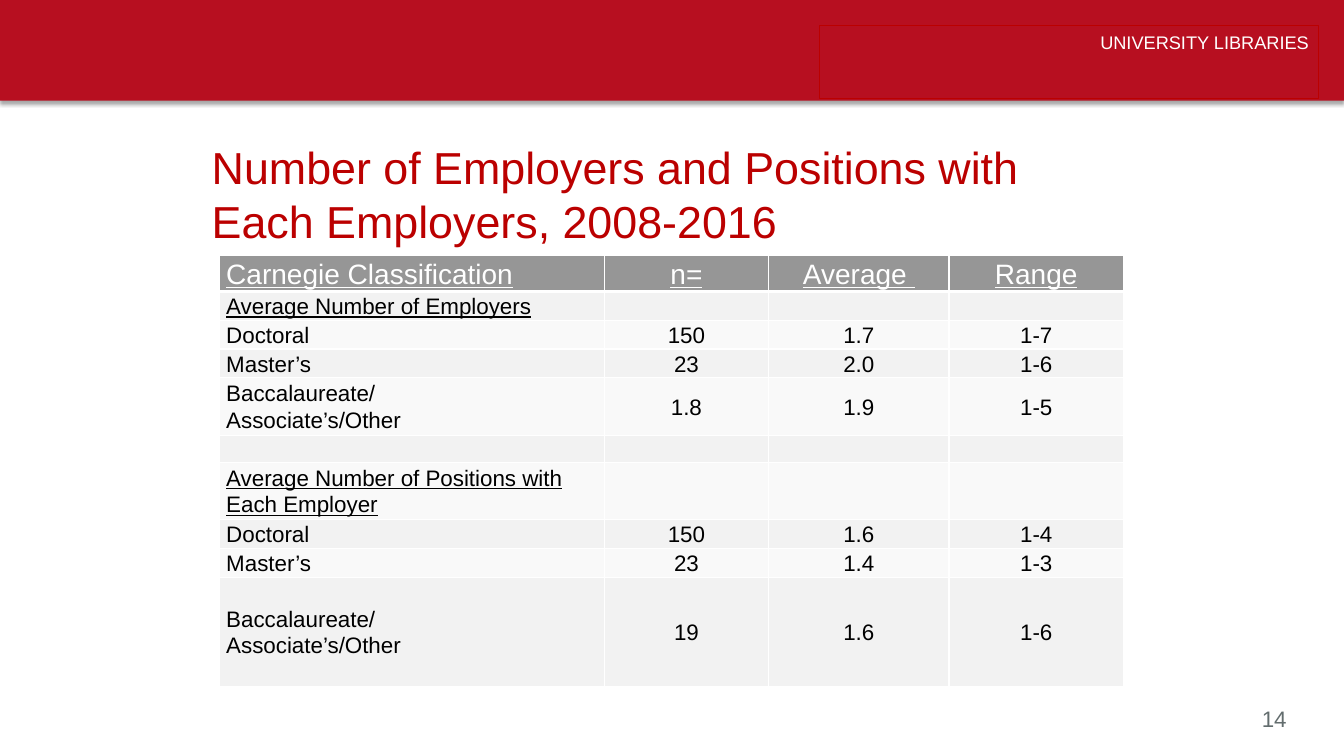
from lxml.etree import SubElement
from pptx import Presentation
from pptx.dml.color import RGBColor
from pptx.enum.shapes import MSO_SHAPE as Shape
from pptx.enum.text import MSO_ANCHOR as Anchor, MSO_AUTO_SIZE as AutoSize, PP_ALIGN as Align
from pptx.oxml.ns import qn
from pptx.util import Pt

BAR_RED = RGBColor(0xB7, 0x0F, 0x20)
TITLE_RED = RGBColor(0xBB, 0x00, 0x00)
HEADER_GREY = RGBColor(0x96, 0x96, 0x96)
BAND_DARK = RGBColor(0xF2, 0xF2, 0xF2)
BAND_LIGHT = RGBColor(0xF9, 0xF9, 0xF9)
NUMBER_GREY = RGBColor(0x63, 0x6D, 0x6E)
WHITE = RGBColor(0xFF, 0xFF, 0xFF)
BLACK = RGBColor(0x00, 0x00, 0x00)
FONT = "Arial"

COLUMN_WIDTHS = (275, 117.4, 128.9, 124.6)
ROWS = (
    (23.6, "Carnegie Classification", "n=", "Average ", "Range"),
    (19, "Average Number of Employers", "", "", ""),
    (19, "Doctoral", "150", "1.7", "1-7"),
    (19, "Master’s", "23", "2.0", "1-6"),
    (38, "Baccalaureate/\nAssociate’s/Other", "1.8", "1.9", "1-5"),
    (19, "", "", "", ""),
    (38, "Average Number of Positions with Each Employer", "", "", ""),
    (19, "Doctoral", "150", "1.6", "1-4"),
    (19, "Master’s", "23", "1.4", "1-3"),
    (78, "Baccalaureate/\nAssociate’s/Other", "19", "1.6", "1-6"),
)


def write_text(frame, text, size, color, align=Align.LEFT, underline=False, spacing=None):
    for index, line in enumerate(text.split("\n")):
        paragraph = frame.add_paragraph() if index else frame.paragraphs[0]
        paragraph.alignment = align
        if spacing:
            paragraph.line_spacing = spacing
        if not line:
            SubElement(paragraph._p, qn("a:endParaRPr"), sz=str(size * 100))
            continue
        run = paragraph.add_run()
        run.text = line
        run.font.name = FONT
        run.font.size = Pt(size)
        run.font.color.rgb = color
        run.font.underline = underline


def place(shape, left, top, width, height):
    shape.left, shape.top = Pt(left), Pt(top)
    shape.width, shape.height = Pt(width), Pt(height)


def add_bar(slide):
    bar = slide.shapes.add_shape(Shape.RECTANGLE, 0, 0, Pt(960), Pt(72))
    bar.fill.solid()
    bar.fill.fore_color.rgb = BAR_RED
    bar.line.fill.background()
    bar.shadow.inherit = False
    effects = bar._element.spPr.find(qn("a:effectLst"))
    shadow = SubElement(effects, qn("a:outerShdw"), blurRad=str(Pt(3.1)),
                        dist=str(Pt(1.8)), dir="5400000", rotWithShape="0")
    color = SubElement(shadow, qn("a:srgbClr"), val=str(BLACK))
    SubElement(color, qn("a:alpha"), val="35000")


def add_label(slide, text, left, top, width, height, wrap=True, **text_format):
    label = slide.shapes.add_textbox(Pt(left), Pt(top), Pt(width), Pt(height))
    label.text_frame.word_wrap = wrap
    write_text(label.text_frame, text, **text_format)
    return label


def set_title(slide, text):
    title = slide.shapes.title
    place(title, 144, 95, 651.6, 87.1)
    frame = title.text_frame
    frame.word_wrap = True
    frame.auto_size = AutoSize.NONE
    frame.vertical_anchor = Anchor.MIDDLE
    write_text(frame, text, size=32, color=TITLE_RED)


def set_borders(cell, **widths):
    properties = cell._tc.get_or_add_tcPr()
    for index, side in enumerate("LRTB"):
        line = SubElement(properties, qn(f"a:ln{side}"), w=str(Pt(widths.get(side, 1))))
        fill = SubElement(line, qn("a:solidFill"))
        SubElement(fill, qn("a:srgbClr"), val=str(WHITE))


def format_cell(cell, text, row, column):
    header = row == 0
    section = text.startswith("Average Number")
    cell.margin_left = cell.margin_right = Pt(5)
    cell.margin_top = cell.margin_bottom = 0
    cell.vertical_anchor = Anchor.MIDDLE
    set_borders(cell, T=3 if row == 1 else 1, B=3 if header else 1)
    cell.fill.solid()
    cell.fill.fore_color.rgb = HEADER_GREY if header else BAND_DARK if row % 2 else BAND_LIGHT
    write_text(cell.text_frame, text, size=20 if header else 16,
               color=WHITE if header else BLACK,
               align=Align.CENTER if column else Align.LEFT,
               underline=header or section, spacing=1.07)


def add_employer_table(slide):
    height = sum(row[0] for row in ROWS)
    frame = slide.shapes.add_table(len(ROWS), len(COLUMN_WIDTHS), Pt(156.6), Pt(182.5),
                                   Pt(sum(COLUMN_WIDTHS)), Pt(height))
    table = frame.table
    for column, width in zip(table.columns, COLUMN_WIDTHS):
        column.width = Pt(width)
    for row, (row_height, *texts) in enumerate(ROWS):
        table.rows[row].height = Pt(row_height)
        for column, text in enumerate(texts):
            format_cell(table.cell(row, column), text, row, column)


def main():
    presentation = Presentation()
    presentation.slide_width, presentation.slide_height = Pt(960), Pt(540)
    slide = presentation.slides.add_slide(presentation.slide_layouts[5])
    add_bar(slide)
    add_label(slide, "14", 894.2, 500.4, 34.6, 26.6, wrap=False, size=16, color=NUMBER_GREY)
    banner = add_label(slide, "UNIVERSITY LIBRARIES", 585.4, 18, 356.4, 52.6, size=13,
                       color=WHITE, align=Align.RIGHT, spacing=Pt(16.4))
    banner.line.color.rgb = TITLE_RED
    banner.line.width = Pt(0.75)
    set_title(slide, "Number of Employers and Positions with Each Employers, 2008-2016")
    add_employer_table(slide)
    presentation.save("out.pptx")


if __name__ == "__main__":
    main()
